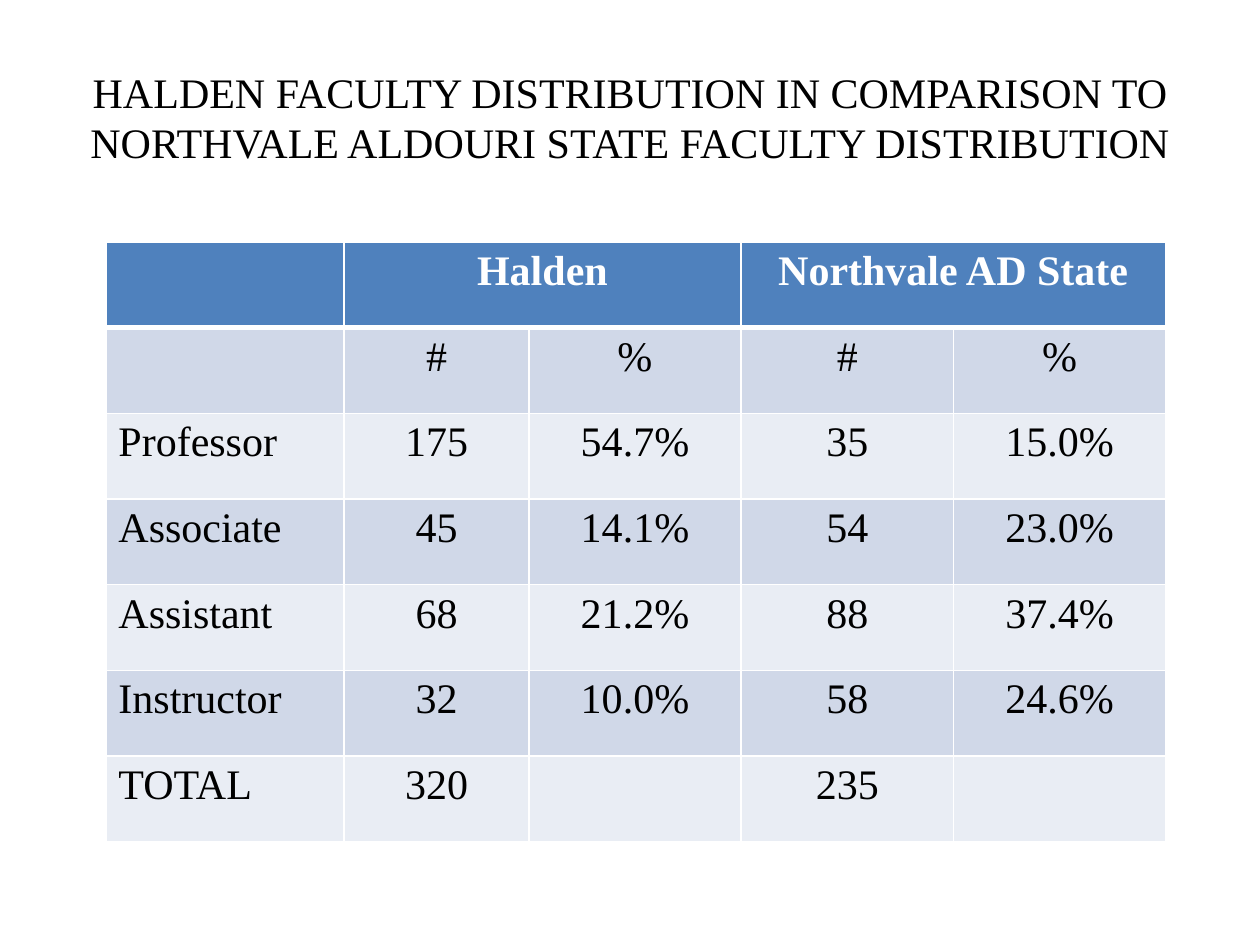
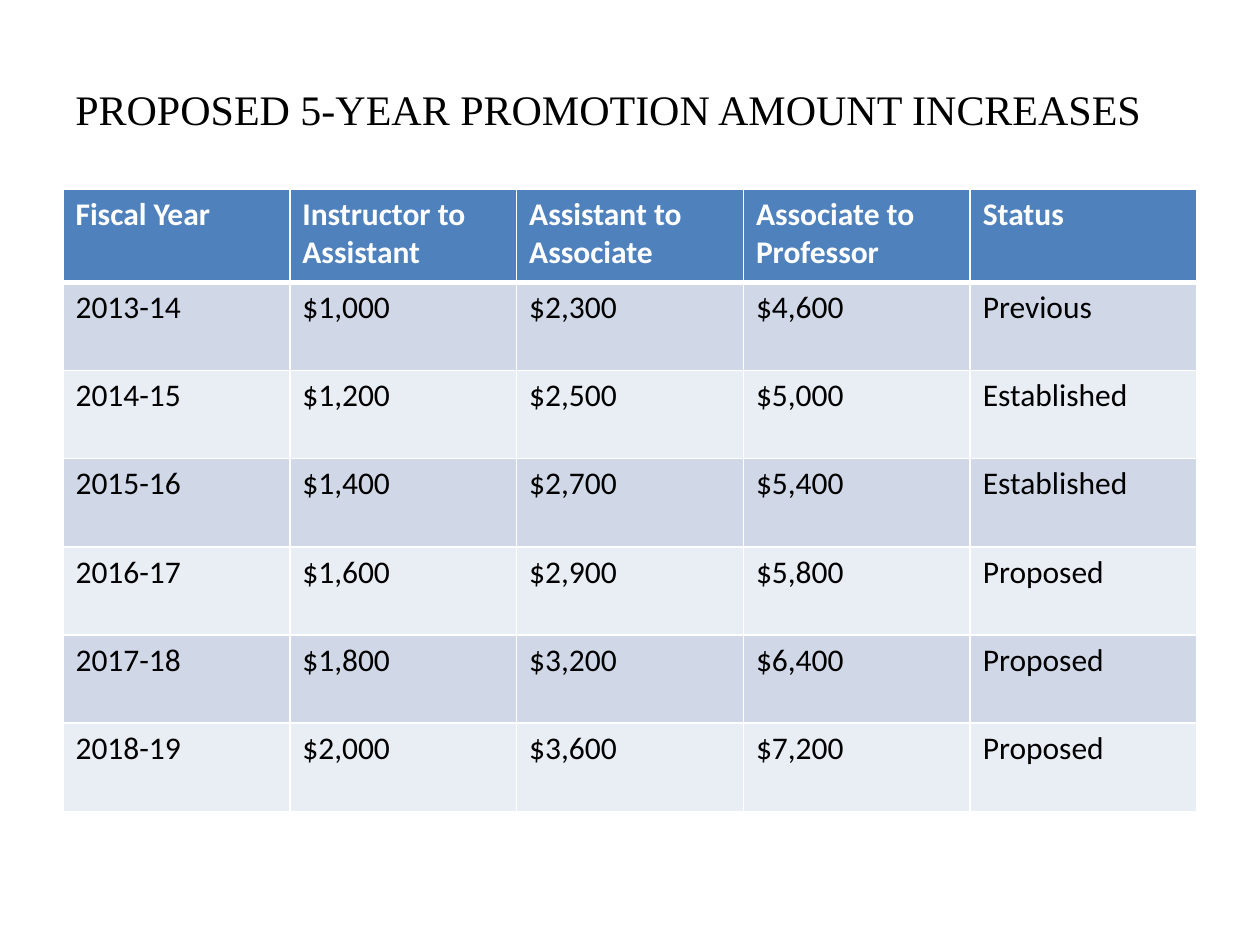
"""Build two slides of faculty distribution and promotion tables."""
from lxml.etree import SubElement
from pptx import Presentation
from pptx.dml.color import RGBColor
from pptx.enum.text import MSO_ANCHOR as Anchor, PP_ALIGN as Align
from pptx.oxml import parse_xml
from pptx.oxml.ns import nsdecls, qn
from pptx.util import Pt

PX = 9144
BLACK, WHITE = "000000", "FFFFFF"
HEADER_FILL = "4F81BD"
BAND_FILLS = ["E9EDF4", "D0D8E8"]
TITLE_FONT = "Times New Roman"


def color(value):
    return RGBColor.from_string(value)


def write(frame, text, font=TITLE_FONT, size=24, ink=BLACK, bold=False, align=Align.LEFT):
    para = frame.paragraphs[0]
    para.alignment = align
    span = para.add_run()
    span.text = text
    span.font.name, span.font.size, span.font.bold = font, Pt(size), bold
    span.font.color.rgb = color(ink)


slides = [
    {
        "title": "HALDEN FACULTY DISTRIBUTION IN COMPARISON TO NORTHVALE ALDOURI STATE FACULTY DISTRIBUTION",
        "title_height": 125, "title_align": Align.CENTER,
        "left": 84, "top": 192,
        "columns": [189, 147, 168, 169, 168], "row_heights": [68] * 7,
        "font": TITLE_FONT, "size": 24, "value_align": Align.CENTER,
        "merged_headers": [(1, 2), (3, 4)],
        "rows": [
            ["", "Halden", "", "Northvale AD State", ""],
            ["", "#", "%", "#", "%"],
            ["Professor", "175", "54.7%", "35", "15.0%"],
            ["Associate", "45", "14.1%", "54", "23.0%"],
            ["Assistant", "68", "21.2%", "88", "37.4%"],
            ["Instructor", "32", "10.0%", "58", "24.6%"],
            ["TOTAL", "320", "", "235", ""],
        ],
    },
    {
        "title": "PROPOSED 5-YEAR PROMOTION AMOUNT INCREASES",
        "title_height": 112, "title_align": Align.LEFT,
        "left": 50, "top": 150,
        "columns": [180] * 5, "row_heights": [74] + [70] * 6,
        "font": "Calibri", "size": 18, "value_align": Align.LEFT,
        "merged_headers": [],
        "rows": [
            ["Fiscal Year", "Instructor to Assistant", "Assistant to Associate",
             "Associate to Professor", "Status"],
            ["2013-14", "$1,000", "$2,300", "$4,600", "Previous"],
            ["2014-15", "$1,200", "$2,500", "$5,000", "Established"],
            ["2015-16", "$1,400", "$2,700", "$5,400", "Established"],
            ["2016-17", "$1,600", "$2,900", "$5,800", "Proposed"],
            ["2017-18", "$1,800", "$3,200", "$6,400", "Proposed"],
            ["2018-19", "$2,000", "$3,600", "$7,200", "Proposed"],
        ],
    },
]

deck = Presentation()
deck.slide_width, deck.slide_height = 1000 * PX, 750 * PX

for content in slides:
    page = deck.slides.add_slide(deck.slide_layouts[6])
    page.background.fill.solid()
    page.background.fill.fore_color.rgb = color(WHITE)

    box = page.shapes.add_textbox(50 * PX, 30 * PX, 900 * PX, content["title_height"] * PX)
    box.text_frame.word_wrap = True
    box.text_frame.vertical_anchor = Anchor.MIDDLE
    write(box.text_frame, content["title"], align=content["title_align"])

    rows, columns, heights = content["rows"], content["columns"], content["row_heights"]
    table = page.shapes.add_table(
        len(rows), len(columns), content["left"] * PX, content["top"] * PX,
        sum(columns) * PX, sum(heights) * PX).table
    table.first_row = table.horz_banding = False
    for column, width in zip(table.columns, columns):
        column.width = width * PX
    for row, height in zip(table.rows, heights):
        row.height = height * PX
    for first, last in content["merged_headers"]:
        table.cell(0, first).merge(table.cell(0, last))

    for row_index, row in enumerate(rows):
        header = row_index == 0
        for column_index, text in enumerate(row):
            cell = table.cell(row_index, column_index)
            properties = cell._tc.get_or_add_tcPr()
            for side in "LRTB":
                thick = (row_index, side) in [(0, "B"), (1, "T")]
                border = parse_xml(f'<a:ln{side} {nsdecls("a")} w="{Pt(3 if thick else 1)}"/>')
                solid = SubElement(border, qn("a:solidFill"))
                SubElement(solid, qn("a:srgbClr"), val=WHITE)
                properties.append(border)
            cell.fill.solid()
            cell.fill.fore_color.rgb = color(HEADER_FILL if header else BAND_FILLS[row_index % 2])
            if text:
                write(cell.text_frame, text, font=content["font"], size=content["size"],
                      ink=WHITE if header else BLACK, bold=header,
                      align=content["value_align"] if column_index else Align.LEFT)

deck.save("out.pptx")
